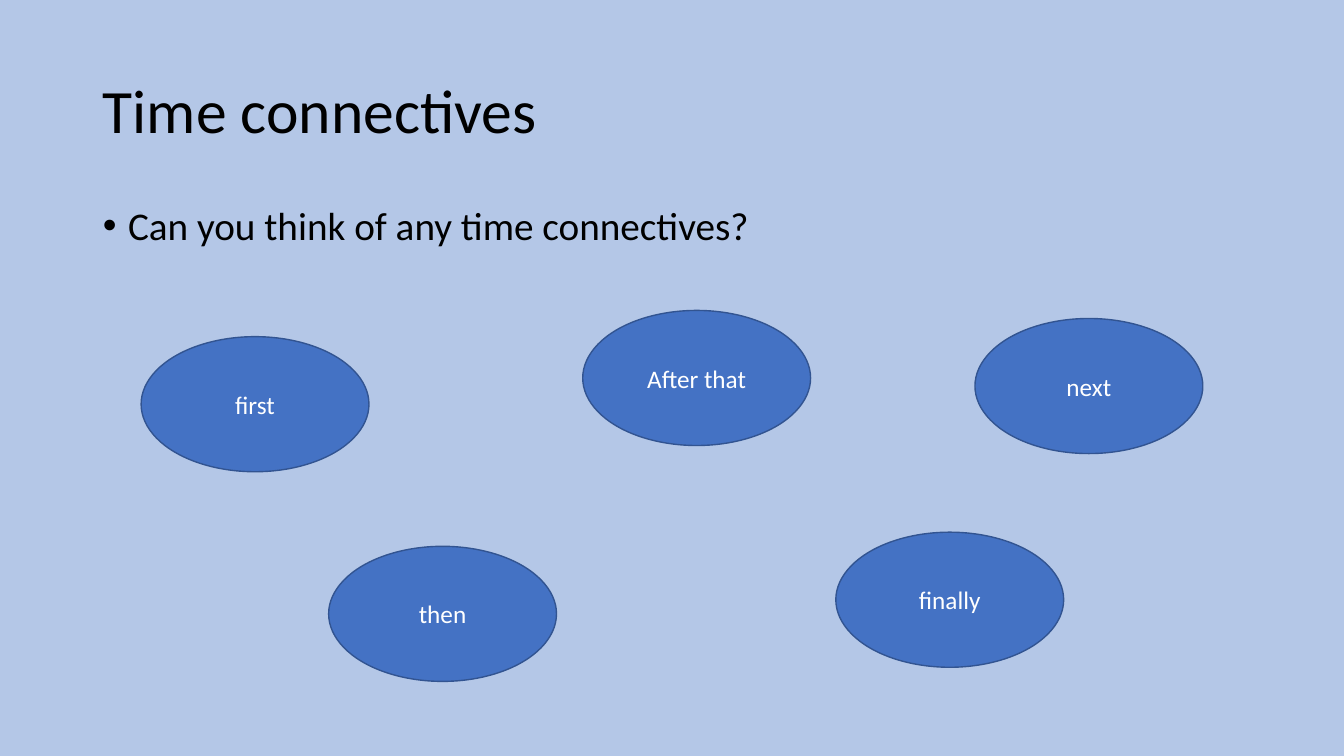
from lxml import etree
from pptx import Presentation
from pptx.dml.color import RGBColor
from pptx.enum.shapes import MSO_SHAPE
from pptx.enum.text import MSO_ANCHOR, MSO_AUTO_SIZE, PP_ALIGN
from pptx.oxml.ns import qn
from pptx.util import Inches, Pt

COLORS = {
    "background": "B4C7E7",
    "text": "000000",
    "oval": "4472C4",
    "oval_line": "325491",
    "oval_text": "FFFFFF",
}
FONT = "Calibri"
OVAL_SIZE = (2.26, 1.34)
CONNECTIVES = [
    ("first", 1.4, 3.34),
    ("then", 3.26, 5.42),
    ("After that", 5.78, 3.08),
    ("next", 9.67, 3.16),
    ("finally", 8.29, 5.28),
]


def rgb(name):
    return RGBColor.from_string(COLORS[name])


def write(shape, text, size, color="text", align=PP_ALIGN.LEFT,
          anchor=MSO_ANCHOR.MIDDLE, line_spacing=None, space_before=0):
    """Fill a shape with one formatted paragraph and return it."""
    tf = shape.text_frame
    tf.word_wrap = True
    tf.auto_size = MSO_AUTO_SIZE.NONE
    tf.vertical_anchor = anchor
    p = tf.paragraphs[0]
    p.alignment = align
    p.line_spacing = line_spacing
    p.space_before = Pt(space_before)
    r = p.add_run()
    r.text = text
    r.font.name = FONT
    r.font.size = Pt(size)
    r.font.color.rgb = rgb(color)
    return p


def place(shape, left, top, width, height):
    shape.left, shape.top = Inches(left), Inches(top)
    shape.width, shape.height = Inches(width), Inches(height)


def add_bullet(p, indent):
    """Give a paragraph a round bullet with a hanging indent in inches."""
    pPr = p._p.get_or_add_pPr()
    pPr.set("marL", str(Inches(indent)))
    pPr.set("indent", str(-Inches(indent)))
    etree.SubElement(pPr, qn("a:buFont")).set("typeface", "Arial")
    etree.SubElement(pPr, qn("a:buChar")).set("char", "•")


def add_oval(s, text, left, top):
    width, height = OVAL_SIZE
    sp = s.shapes.add_shape(MSO_SHAPE.OVAL, Inches(left), Inches(top),
                            Inches(width), Inches(height))
    sp.shadow.inherit = False
    sp.fill.solid()
    sp.fill.fore_color.rgb = rgb("oval")
    sp.line.color.rgb = rgb("oval_line")
    sp.line.width = Pt(1)
    write(sp, text, 18, color="oval_text", align=PP_ALIGN.CENTER)


def main():
    prs = Presentation()
    prs.slide_width, prs.slide_height = Inches(13.33), Inches(7.5)
    s = prs.slides.add_slide(prs.slide_layouts[1])
    s.background.fill.solid()
    s.background.fill.fore_color.rgb = rgb("background")

    title, body = s.shapes.title, s.placeholders[1]
    place(title, 0.92, 0.4, 11.5, 1.45)
    write(title, "Time connectives", 44, line_spacing=0.9)
    place(body, 0.92, 2, 11.5, 4.76)
    question = write(body, "Can you think of any time connectives?", 28,
                     anchor=MSO_ANCHOR.TOP, line_spacing=0.9, space_before=10)
    add_bullet(question, 0.25)

    for text, left, top in CONNECTIVES:
        add_oval(s, text, left, top)
    prs.save("out.pptx")


if __name__ == "__main__":
    main()
